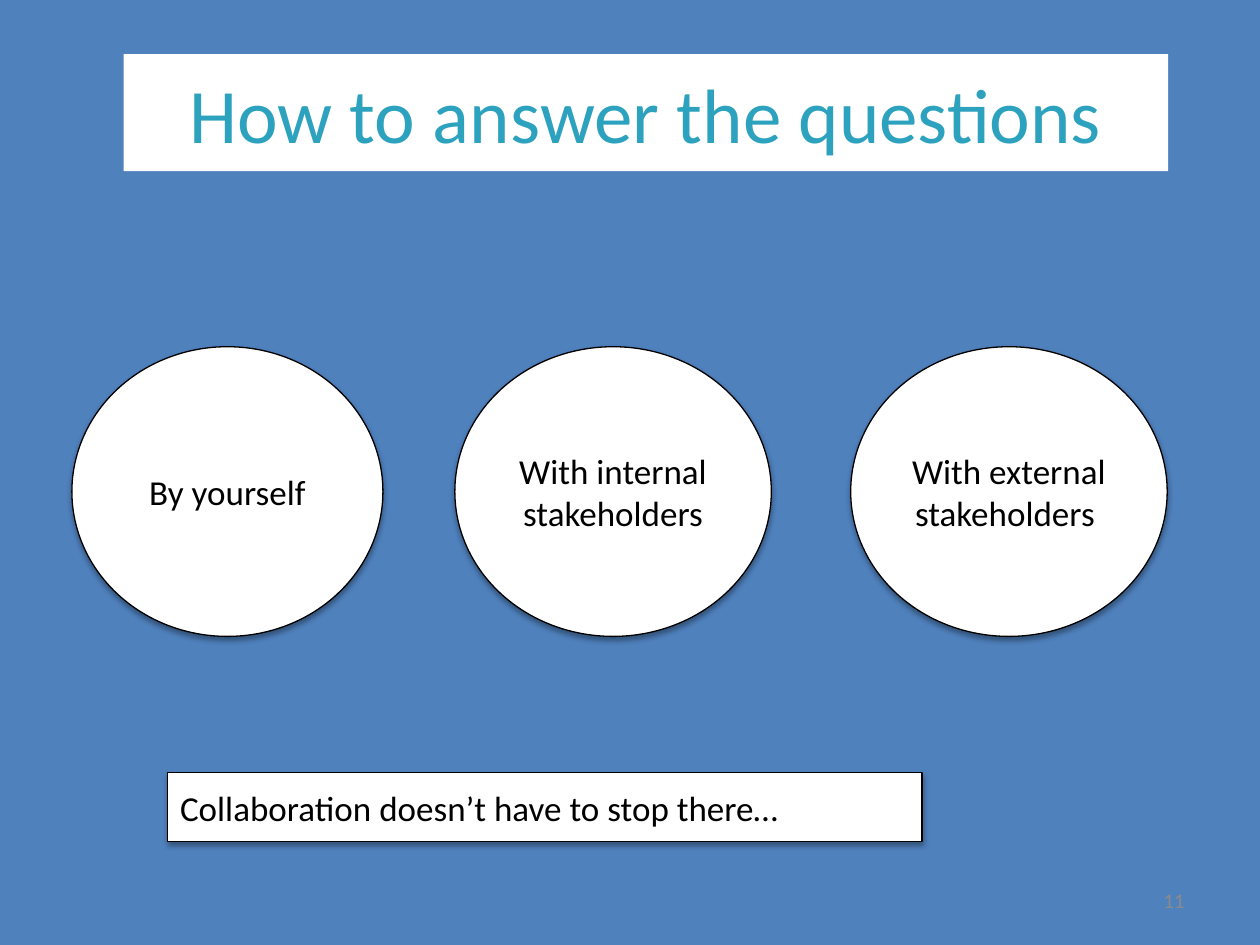
from dataclasses import dataclass

from lxml.etree import SubElement
from pptx import Presentation
from pptx.dml.color import RGBColor
from pptx.enum.shapes import MSO_SHAPE
from pptx.enum.text import MSO_ANCHOR, PP_ALIGN
from pptx.oxml.ns import qn
from pptx.util import Cm, Pt


@dataclass(frozen=True)
class Theme:
    font: str = "Calibri"
    background: RGBColor = RGBColor(0x4F, 0x81, 0xBD)
    panel: RGBColor = RGBColor(0xFF, 0xFF, 0xFF)
    ink: RGBColor = RGBColor(0, 0, 0)
    heading: RGBColor = RGBColor(0x2D, 0xA2, 0xBF)
    muted: RGBColor = RGBColor(0x8B, 0x8B, 0x8B)
    heading_size: Pt = Pt(44)
    body_size: Pt = Pt(20)
    number_size: Pt = Pt(12)
    outline: Pt = Pt(0.75)


@dataclass(frozen=True)
class Box:
    """Position and size in centimetres."""
    left: float
    top: float
    width: float
    height: float

    def lengths(self) -> tuple:
        return Cm(self.left), Cm(self.top), Cm(self.width), Cm(self.height)


@dataclass(frozen=True)
class Panel:
    text: str
    box: Box
    outline_form: MSO_SHAPE = MSO_SHAPE.OVAL
    align: PP_ALIGN = PP_ALIGN.CENTER


THEME = Theme()
CIRCLE_TOP, CIRCLE_HEIGHT = 6.99, 5.84
PANELS = [
    Panel("By yourself", Box(1.45, CIRCLE_TOP, 6.27, CIRCLE_HEIGHT)),
    Panel("With internal stakeholders", Box(9.17, CIRCLE_TOP, 6.38, CIRCLE_HEIGHT)),
    Panel("With external stakeholders ", Box(17.15, CIRCLE_TOP, 6.38, CIRCLE_HEIGHT)),
    Panel("Collaboration doesn’t have to stop there…", Box(3.38, 15.57, 15.21, 1.4),
          MSO_SHAPE.RECTANGLE, PP_ALIGN.LEFT),
]


def write(shape, text: str, size: Pt, color: RGBColor, align: PP_ALIGN) -> None:
    frame = shape.text_frame
    frame.text = text
    frame.word_wrap = True
    frame.vertical_anchor = MSO_ANCHOR.MIDDLE
    paragraph = frame.paragraphs[0]
    paragraph.alignment = align
    font = paragraph.runs[0].font
    font.name, font.size = THEME.font, size
    font.color.rgb = color


def fill(target, color: RGBColor) -> None:
    target.fill.solid()
    target.fill.fore_color.rgb = color


def add_soft_shadow(shape) -> None:
    """Give the shape a faint shadow that falls straight down."""
    shape.shadow.inherit = False
    effects = shape._element.spPr.find(qn("a:effectLst"))
    shadow = SubElement(effects, qn("a:outerShdw"), blurRad=str(Pt(3.1)),
                        dist=str(Pt(1.8)), dir="5400000", rotWithShape="0")
    color = SubElement(shadow, qn("a:srgbClr"), val=str(THEME.ink))
    SubElement(color, qn("a:alpha"), val="35000")


def add_panel(slide, panel: Panel) -> None:
    shape = slide.shapes.add_shape(panel.outline_form, *panel.box.lengths())
    fill(shape, THEME.panel)
    shape.line.color.rgb = THEME.ink
    shape.line.width = THEME.outline
    add_soft_shadow(shape)
    write(shape, panel.text, THEME.body_size, THEME.ink, panel.align)


def set_title(slide, text: str, box: Box) -> None:
    title = slide.shapes.title
    title.left, title.top, title.width, title.height = box.lengths()
    fill(title, THEME.panel)
    write(title, text, THEME.heading_size, THEME.heading, PP_ALIGN.CENTER)


def add_page_number(slide, number: int, box: Box) -> None:
    label = slide.shapes.add_textbox(*box.lengths())
    write(label, str(number), THEME.number_size, THEME.muted, PP_ALIGN.RIGHT)


def main() -> None:
    deck = Presentation()
    deck.slide_width, deck.slide_height = Cm(25.4), Cm(19.05)
    slide = deck.slides.add_slide(deck.slide_layouts.get_by_name("Title Only"))
    fill(slide.background, THEME.background)
    set_title(slide, "How to answer the questions", Box(2.49, 1.09, 21.06, 2.36))
    for panel in PANELS:
        add_panel(slide, panel)
    add_page_number(slide, 11, Box(18.2, 17.65, 5.93, 1.01))
    deck.save("out.pptx")


if __name__ == "__main__":
    main()
